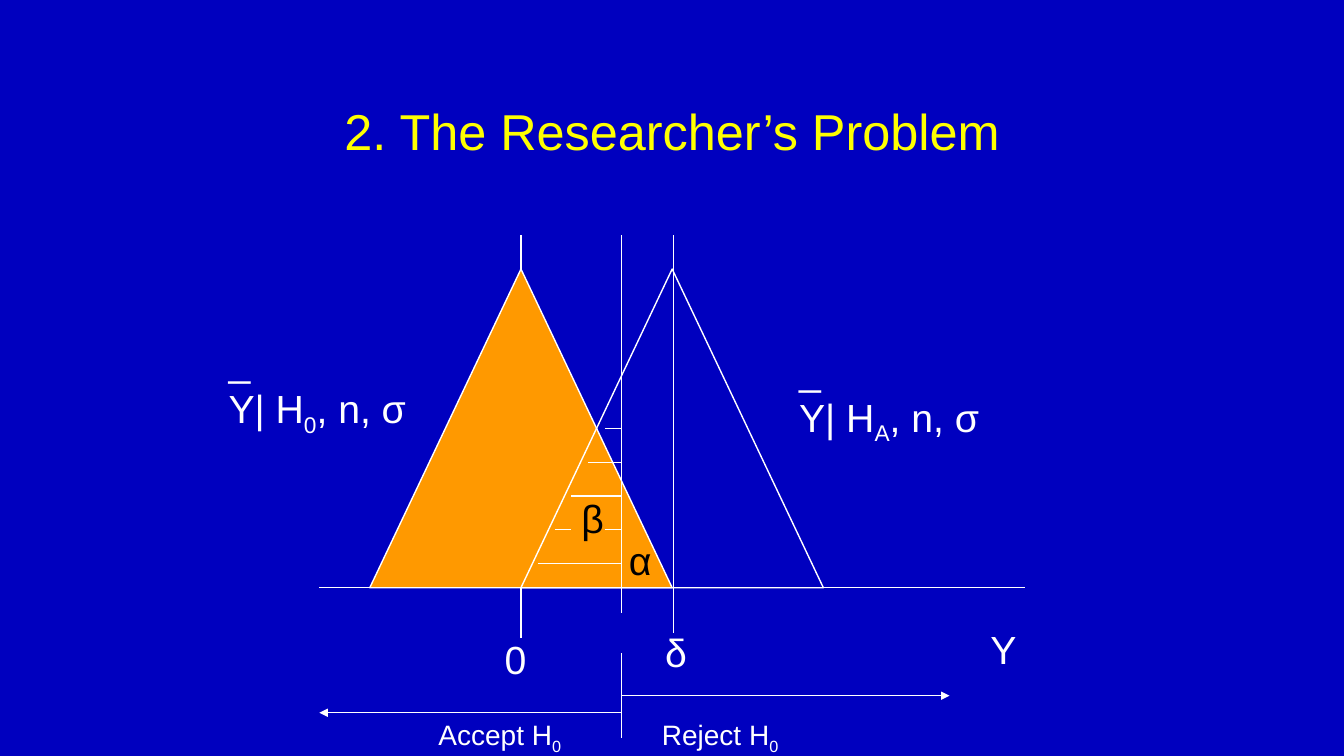
from lxml import etree
from pptx import Presentation
from pptx.dml.color import RGBColor
from pptx.enum.shapes import MSO_CONNECTOR, MSO_SHAPE
from pptx.enum.text import MSO_ANCHOR, PP_ALIGN
from pptx.oxml.ns import qn
from pptx.util import Cm, Pt

STRAIGHT = MSO_CONNECTOR.STRAIGHT
TRIANGLE = MSO_SHAPE.ISOSCELES_TRIANGLE
MIDDLE = MSO_ANCHOR.MIDDLE
TOP = MSO_ANCHOR.TOP
CENTER = PP_ALIGN.CENTER
LEFT = PP_ALIGN.LEFT

COLORS = {
    "background": "0000BF",
    "title": "FFFF00",
    "line": "FFFFFF",
    "text": "FFFFFF",
    "area": "FF9900",
    "symbol": "000000",
}
AXIS_Y = 14.81
LINE_TOP = 5.92
NULL_X = 13.13
CUTOFF_X = 15.67
DELTA_X = 16.97
APEX_Y = 6.78
BASE_WIDTH = 7.62


def rgb(name):
    return RGBColor.from_string(COLORS[name])


def add_line(s, x1, y1, x2, y2, arrow=False):
    line = s.shapes.add_connector(STRAIGHT, Cm(x1), Cm(y1), Cm(x2), Cm(y2))
    line.line.color.rgb = rgb("line")
    line.line.width = Pt(1)
    if arrow:
        ln = line.line._get_or_add_ln()
        etree.SubElement(ln, qn("a:tailEnd"), type="triangle")
    etree.SubElement(line._element.spPr, qn("a:effectLst"))


def add_distribution(s, left, fill=None):
    sp = s.shapes.add_shape(TRIANGLE, Cm(left), Cm(APEX_Y),
                            Cm(BASE_WIDTH), Cm(AXIS_Y - APEX_Y))
    sp.shadow.inherit = False
    if fill:
        sp.fill.solid()
        sp.fill.fore_color.rgb = rgb(fill)
    else:
        sp.fill.background()
    sp.line.color.rgb = rgb("line")
    sp.line.width = Pt(1)


def add_text(s, box, paragraphs, size=28, color="text", align=LEFT,
             anchor=TOP, wrap=False):
    tf = s.shapes.add_textbox(*map(Cm, box)).text_frame
    tf.word_wrap = wrap
    tf.vertical_anchor = anchor
    for i, runs in enumerate(paragraphs):
        p = tf.add_paragraph() if i else tf.paragraphs[0]
        p.alignment = align
        p.font.name = "Arial"
        p.font.size = Pt(size)
        p.font.color.rgb = rgb(color)
        for j, text in enumerate(runs):
            r = p.add_run()
            r.text = text
            if j % 2:
                r._r.get_or_add_rPr().set("baseline", "-25000")
    return tf


def add_tab_stop(p, position):
    pPr = p._p.get_or_add_pPr()
    tabs = etree.Element(qn("a:tabLst"))
    etree.SubElement(tabs, qn("a:tab"), pos=str(Cm(position)), algn="l")
    pPr.find(qn("a:defRPr")).addprevious(tabs)


def add_hatching(s):
    for i in range(5):
        y = 10.8 + 0.85 * i
        left = 15.24 - 0.42 * i
        if i == 3:
            add_line(s, left, y, 14.4, y)
            left = 15.24
        add_line(s, left, y, CUTOFF_X, y)


def add_decision(s):
    add_line(s, CUTOFF_X, 17.53, 23.93, 17.53, arrow=True)
    add_line(s, CUTOFF_X, 17.96, 8.05, 17.96, arrow=True)
    tf = add_text(s, (10.8, 17.96, 9.4, 1.12),
                  [["Accept H", "0", "\tReject H", "0"]], size=20, wrap=True)
    add_tab_stop(tf.paragraphs[0], 5.63)
    add_line(s, CUTOFF_X, 18.59, CUTOFF_X, 16.46)


def main():
    prs = Presentation()
    prs.slide_width = Cm(33.87)
    prs.slide_height = Cm(19.05)
    s = prs.slides.add_slide(prs.slide_layouts[6])
    s.background.fill.solid()
    s.background.fill.fore_color.rgb = rgb("background")

    add_text(s, (5.51, 1.7, 22.86, 3.18), [["2. The Researcher’s Problem"]],
             size=36, color="title", align=CENTER, anchor=MIDDLE, wrap=True)
    add_line(s, 8.05, AXIS_Y, 25.83, AXIS_Y)
    add_line(s, NULL_X, 16.08, NULL_X, LINE_TOP)
    add_distribution(s, NULL_X - BASE_WIDTH / 2, "area")
    add_line(s, DELTA_X, 15.95, DELTA_X, LINE_TOP)
    add_distribution(s, NULL_X)
    add_line(s, CUTOFF_X, 15.44, CUTOFF_X, LINE_TOP)

    for left, top, width, hypothesis in ((5.51, 8.38, 5.03, "0"),
                                         (19.89, 8.59, 5.11, "A")):
        add_text(s, (left, top, width, 2.62),
                 [["_"], ["Y| H", hypothesis, ", n, σ"]])

    for symbol, left, top, width, color in (
        ("δ", 16.51, 15.72, 0.99, "text"),
        ("0", 12.47, 15.88, 1.07, "text"),
        ("Y", 24.71, 15.62, 1.17, "text"),
        ("α", 15.6, 13.39, 1.14, "symbol"),
        ("β", 14.4, 12.32, 1.04, "symbol"),
    ):
        add_text(s, (left, top, width, 1.45), [[symbol]], color=color)

    add_hatching(s)
    add_decision(s)
    prs.save("out.pptx")


if __name__ == "__main__":
    main()
